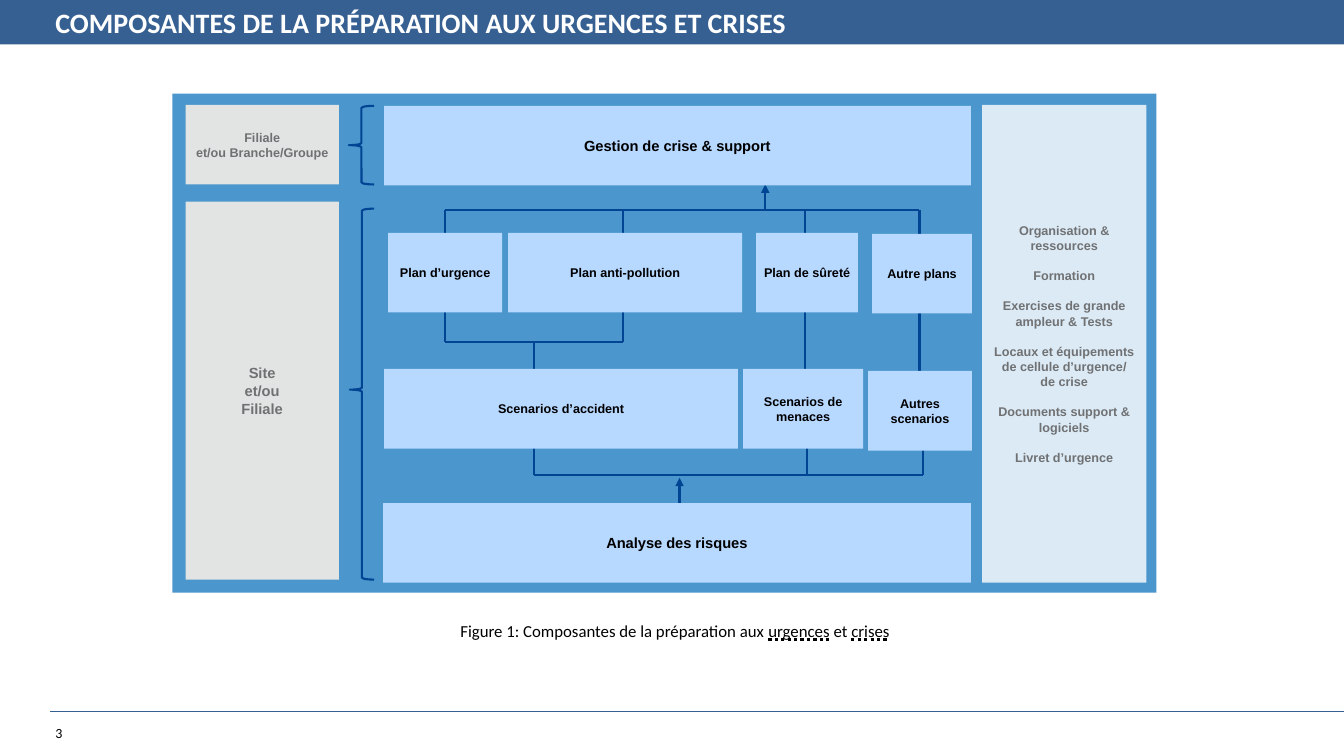
import pptx
import pptx.dml.color
import pptx.enum.shapes
import pptx.enum.text
import pptx.oxml
import pptx.util
from pptx.util import Inches

SHAPES = pptx.enum.shapes.MSO_SHAPE
ALIGN = pptx.enum.text.PP_ALIGN
ANCHOR = pptx.enum.text.MSO_ANCHOR
DOTTED = pptx.enum.text.MSO_UNDERLINE.DOTTED_HEAVY_LINE

BAND, FRAME, PLAN, LINK = "376092", "4A96CD", "B7D8FF", "004494"
SCOPE, SUPPORT, GREY, BLACK, WHITE = "E2E3E3", "DBEAF5", "707173", "000000", "FFFFFF"


def rgb(value):
    return pptx.dml.color.RGBColor.from_string(value)


def drawing_element(tag, attributes=""):
    return pptx.oxml.parse_xml(
        f'<a:{tag} xmlns:a="http://schemas.openxmlformats.org/drawingml/2006/main" {attributes}/>')


class Diagram:
    """The current slide with its text and line styles."""

    def __init__(self, slide):
        self.shapes = slide.shapes
        self.box_font = {"name": "Arial", "bold": True}
        self.page_font = {"name": "Calibri"}

    def fill_text(self, frame, paragraphs, font, color, size, align, gap=0):
        """Each paragraph is a list of (text, underline) runs."""
        frame.word_wrap = True
        for index, runs in enumerate(paragraphs):
            paragraph = frame.add_paragraph() if index else frame.paragraphs[0]
            paragraph.alignment = align
            if index and gap:
                paragraph.space_before = pptx.util.Pt(gap)
            for text, underline in runs:
                for row, words in enumerate(text.split("\n")):
                    if row:
                        paragraph.add_line_break()
                    run = paragraph.add_run()
                    run.text = words
                    formats = {**font, "size": pptx.util.Pt(size), "underline": underline}
                    for name, value in formats.items():
                        setattr(run.font, name, value)
                    run.font.color.rgb = rgb(color)

    def box(self, place, fill, lines=(), size=9, color=BLACK, gap=0):
        shape = self.shapes.add_shape(SHAPES.RECTANGLE, *map(Inches, place))
        shape.shadow.inherit = False
        shape.fill.solid()
        shape.fill.fore_color.rgb = rgb(fill)
        shape.line.fill.background()
        if lines:
            frame = shape.text_frame
            formats = {"margin_left": Inches(0.07), "margin_right": Inches(0.07),
                       "margin_top": Inches(0.04), "margin_bottom": Inches(0.04),
                       "vertical_anchor": ANCHOR.MIDDLE}
            for name, value in formats.items():
                setattr(frame, name, value)
            self.fill_text(frame, [[(line, None)] for line in lines],
                           self.box_font, color, size, ALIGN.CENTER, gap)

    def text(self, place, runs, size, color=BLACK, align=ALIGN.LEFT,
             anchor=ANCHOR.TOP, bold=False):
        frame = self.shapes.add_textbox(*map(Inches, place)).text_frame
        frame.vertical_anchor = anchor
        self.fill_text(frame, [runs], {**self.page_font, "bold": bold}, color, size, align)

    def line(self, x1, y1, x2, y2, color=LINK, width=1.5, arrow=False):
        connector = self.shapes.add_connector(
            pptx.enum.shapes.MSO_CONNECTOR.STRAIGHT, *map(Inches, (x1, y1, x2, y2)))
        connector.line.color.rgb = rgb(color)
        connector.line.width = pptx.util.Pt(width)
        if arrow:
            connector.line._get_or_add_ln().append(drawing_element("tailEnd", 'type="triangle"'))
        connector._element.spPr.append(drawing_element("effectLst"))

    def brace(self, place, middle):
        shape = self.shapes.add_shape(SHAPES.LEFT_BRACE, *map(Inches, place))
        shape.shadow.inherit = False
        shape.adjustments[0] = 0.083
        shape.adjustments[1] = middle
        shape.fill.background()
        shape.line.color.rgb = rgb(LINK)
        shape.line.width = pptx.util.Pt(1.5)


def draw_page(diagram):
    diagram.line(0.5, 7.06, 13.33, 7.06, BAND, 0.75)
    diagram.text((0.45, 7.14, 0.71, 0.27), [("3", None)], 10)
    diagram.box((0, 0, 13.33, 0.44), BAND)
    diagram.text((0.45, 0, 7.72, 0.44),
                 [("COMPOSANTES DE LA PRÉPARATION AUX URGENCES ET CRISES", None)],
                 20, WHITE, anchor=ANCHOR.MIDDLE, bold=True)
    diagram.text((3.36, 6.11, 6.67, 0.3),
                 [("Figure 1: Composantes de la préparation aux ", None), ("urgences", DOTTED),
                  (" et ", None), ("crises", DOTTED)], 12, align=ALIGN.CENTER)


def draw_links(diagram):
    plans_bus, accident_bus, scenarios_bus = 2.08, 3.39, 4.71
    emergency, pollution, security, other = 4.41, 6.18, 7.98, 9.12
    accident, threats, other_scenarios = 5.3, 8, 9.15

    diagram.line(emergency, plans_bus, other, plans_bus)
    for x in (emergency, pollution, security, other):
        diagram.line(x, plans_bus, x, 2.36)
    diagram.line(emergency, accident_bus, pollution, accident_bus)
    for x in (emergency, pollution):
        diagram.line(x, 3.05, x, accident_bus)
    diagram.line(accident, accident_bus, accident, 3.71)
    for x in (security, other):
        diagram.line(x, 3.05, x, 3.73)
    diagram.line(accident, scenarios_bus, other_scenarios, scenarios_bus)
    for x in (accident, threats, other_scenarios):
        diagram.line(x, 4.43, x, scenarios_bus)
    diagram.line(7.59, plans_bus, 7.59, 1.83, arrow=True)
    diagram.line(6.74, 4.99, 6.74, 4.74, arrow=True)


def draw_boxes(diagram):
    height = 0.79
    for left, top, width, label, size in (
            (3.81, 1.05, 5.82, "Gestion de crise & support", 10.5),
            (3.85, 2.31, 1.13, "Plan d’urgence", 9),
            (5.04, 2.31, 2.32, "Plan anti-pollution", 9),
            (7.5, 2.31, 1.01, "Plan de sûreté", 9),
            (8.65, 2.32, 0.99, "Autre plans", 9),
            (3.81, 3.66, 3.51, "Scenarios d’accident", 9),
            (7.37, 3.66, 1.19, "Scenarios de menaces", 9),
            (8.61, 3.68, 1.03, "Autres scenarios", 9),
            (3.8, 4.99, 5.83, "Analyse des risques", 10.5)):
        diagram.box((left, top, width, height), PLAN, [label], size)
    diagram.box((1.84, 1.04, 1.52, height), SCOPE,
                ["Filiale", "et/ou Branche/Groupe"], color=GREY)
    diagram.box((1.84, 2, 1.52, 3.75), SCOPE, ["Site", "et/ou", "Filiale"], 10.5, GREY)
    diagram.box((9.74, 1.04, 1.63, 4.74), SUPPORT,
                ["Organisation & ressources", "Formation",
                 "Exercises de grande ampleur & Tests",
                 "Locaux et équipements de cellule d’urgence/\nde crise",
                 "Documents support & logiciels", "Livret d’urgence"],
                color=GREY, gap=10.8)


def main():
    presentation = pptx.Presentation()
    presentation.slide_width = Inches(13.33)
    presentation.slide_height = Inches(7.5)
    diagram = Diagram(presentation.slides.add_slide(presentation.slide_layouts[6]))
    draw_page(diagram)
    diagram.box((1.71, 0.93, 9.76, 4.95), FRAME)
    draw_links(diagram)
    diagram.brace((3.46, 1.05, 0.25, 0.78), 0.5)
    diagram.brace((3.47, 2.07, 0.24, 3.68), 0.488)
    draw_boxes(diagram)
    presentation.save("out.pptx")


if __name__ == "__main__":
    main()
